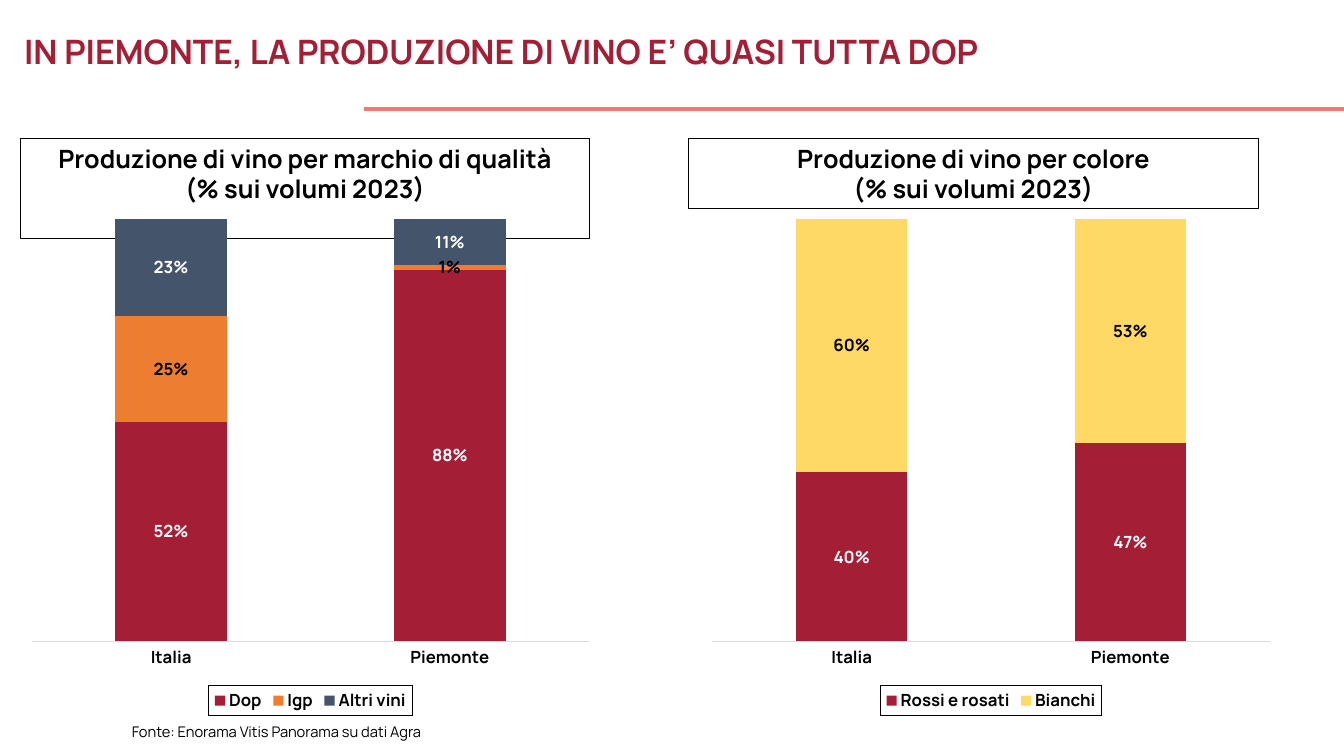
"""Build the slide on Piedmont wine production by quality mark and by colour."""
from dataclasses import dataclass

from lxml import etree
from pptx import Presentation
from pptx.chart.data import CategoryChartData
from pptx.dml.color import RGBColor
from pptx.enum.chart import XL_CHART_TYPE, XL_LABEL_POSITION, XL_LEGEND_POSITION, XL_TICK_MARK
from pptx.enum.shapes import MSO_CONNECTOR, MSO_SHAPE
from pptx.enum.text import MSO_ANCHOR, PP_ALIGN
from pptx.oxml.ns import qn
from pptx.util import Inches, Pt

STACKED = XL_CHART_TYPE.COLUMN_STACKED_100
CENTER_LABEL = XL_LABEL_POSITION.CENTER
BOTTOM = XL_LEGEND_POSITION.BOTTOM
NO_TICK = XL_TICK_MARK.NONE
STRAIGHT = MSO_CONNECTOR.STRAIGHT
RECT = MSO_SHAPE.RECTANGLE
TOP = MSO_ANCHOR.TOP
LEFT, CENTER = PP_ALIGN.LEFT, PP_ALIGN.CENTER


@dataclass(frozen=True)
class Theme:
    font: str = "Manrope"
    red: str = "A41F35"
    orange: str = "ED7D31"
    slate: str = "44546A"
    yellow: str = "FFD966"
    rule: str = "F87575"
    axis: str = "D9D9D9"
    black: str = "000000"
    white: str = "FFFFFF"
    title: float = 24
    heading: float = 18
    chart: float = 12
    source: float = 10.5


T = Theme()
TITLE = "IN PIEMONTE, LA PRODUZIONE DI VINO E’ QUASI TUTTA DOP"
SOURCE = "Fonte: Enorama Vitis Panorama su dati Agra"
SUBHEADING = "(% sui volumi 2023)"
REGIONS = ["Italia", "Piemonte"]
PANELS = [
    {
        "heading": "Produzione di vino per marchio di qualità",
        "box": (0.2, 1.0),
        "chart_left": 0.2,
        "legend_share": 0.35,
        "series": [
            ("Dop", (0.52, 0.88), T.red, T.white),
            ("Igp", (0.25, 0.01), T.orange, T.black),
            ("Altri vini", (0.23, 0.11), T.slate, T.white),
        ],
    },
    {
        "heading": "Produzione di vino per colore",
        "box": (6.83, 0.7),
        "chart_left": 6.95,
        "legend_share": 0.38,
        "series": [
            ("Rossi e rosati", (0.4, 0.47), T.red, T.white),
            ("Bianchi", (0.6, 0.53), T.yellow, T.black),
        ],
    },
]
WIDTH, HEIGHT = 13.33, 7.5
BOX_TOP, BOX_WIDTH = 1.37, 5.65
CHART_TOP, CHART_WIDTH, CHART_HEIGHT = 2.07, 5.76, 5.05
PLOT_SHARES = (0.02, 0.02, 0.96, 0.83)
LEGEND_TOP, LEGEND_HEIGHT = 0.94, 0.06


def rgb(color):
    return RGBColor.from_string(color)


def style_font(font, size, color, bold=True):
    font.name, font.size, font.bold = T.font, Pt(size), bold
    font.color.rgb = rgb(color)


def write(tf, lines, size, color, bold=True, align=LEFT, wrap=True):
    tf.word_wrap = wrap
    tf.vertical_anchor = TOP
    for i, line in enumerate(lines):
        p = tf.add_paragraph() if i else tf.paragraphs[0]
        p.alignment = align
        r = p.add_run()
        r.text = line
        style_font(r.font, size, color, bold)


def add_text(s, area, text, size, color, bold, wrap=True):
    box = s.shapes.add_textbox(*map(Inches, area))
    write(box.text_frame, [text], size, color, bold, wrap=wrap)


def make_layout(shares, inner=False):
    layout = etree.Element(qn("c:layout"))
    manual = etree.SubElement(layout, qn("c:manualLayout"))
    settings = [("layoutTarget", "inner")] if inner else []
    settings += [("xMode", "edge"), ("yMode", "edge")]
    settings += zip("xywh", shares)
    for tag, value in settings:
        etree.SubElement(manual, qn(f"c:{tag}")).set("val", str(value))
    return layout


def place_plot(chart):
    plot_area = chart._chartSpace.find(".//" + qn("c:plotArea"))
    for old in plot_area.findall(qn("c:layout")):
        plot_area.remove(old)
    plot_area.insert(0, make_layout(PLOT_SHARES, inner=True))


def add_legend(chart, share):
    chart.has_legend = True
    legend = chart.legend
    legend.position = BOTTOM
    legend.include_in_layout = False
    style_font(legend.font, T.chart, T.black)
    node = legend._element
    for old in node.findall(qn("c:layout")):
        node.remove(old)
    overlay = node.find(qn("c:overlay"))
    overlay.addprevious(make_layout(((1 - share) / 2, LEGEND_TOP, share, LEGEND_HEIGHT)))
    sp_pr = etree.Element(qn("c:spPr"))
    line = etree.SubElement(sp_pr, qn("a:ln"))
    fill = etree.SubElement(line, qn("a:solidFill"))
    etree.SubElement(fill, qn("a:srgbClr")).set("val", T.black)
    overlay.addnext(sp_pr)


def add_panel(s, panel):
    left, height = panel["box"]
    sp = s.shapes.add_shape(RECT, *map(Inches, (left, BOX_TOP, BOX_WIDTH, height)))
    sp.shadow.inherit = False
    sp.fill.background()
    sp.line.color.rgb = rgb(T.black)
    sp.line.width = Pt(0)
    write(sp.text_frame, [panel["heading"], SUBHEADING], T.heading, T.black, align=CENTER)

    data = CategoryChartData(number_format="0%")
    data.categories = REGIONS
    for name, values, _, _ in panel["series"]:
        data.add_series(name, values)
    area = (panel["chart_left"], CHART_TOP, CHART_WIDTH, CHART_HEIGHT)
    chart = s.shapes.add_chart(STACKED, *map(Inches, area), data).chart
    chart.has_title = False
    style_font(chart.font, T.chart, T.black)
    plot = chart.plots[0]
    plot.gap_width, plot.overlap, plot.vary_by_categories = 150, 100, False
    for series, (_, _, color, label_color) in zip(plot.series, panel["series"]):
        series.format.fill.solid()
        series.format.fill.fore_color.rgb = rgb(color)
        labels = series.data_labels
        labels.show_value = True
        labels.position = CENTER_LABEL
        labels.number_format, labels.number_format_is_linked = "0%", False
        style_font(labels.font, T.chart, label_color)
    chart.value_axis.visible = False
    chart.value_axis.has_major_gridlines = False
    axis = chart.category_axis
    axis.major_tick_mark = axis.minor_tick_mark = NO_TICK
    axis.format.line.color.rgb = rgb(T.axis)
    axis.format.line.width = Pt(0.75)
    style_font(axis.tick_labels.font, T.chart, T.black)
    place_plot(chart)
    add_legend(chart, panel["legend_share"])


def main():
    prs = Presentation()
    prs.slide_width, prs.slide_height = Inches(WIDTH), Inches(HEIGHT)
    s = prs.slides.add_slide(prs.slide_layouts[6])
    rule = s.shapes.add_connector(STRAIGHT, *map(Inches, (3.61, 1.08, WIDTH, 1.08)))
    rule.line.color.rgb = rgb(T.rule)
    rule.line.width = Pt(3)
    etree.SubElement(rule._element.spPr, qn("a:effectLst"))
    add_text(s, (0.14, 0.26, 13.06, 0.5), TITLE, T.title, T.red, True)
    add_text(s, (1.21, 7.12, 3.34, 0.27), SOURCE, T.source, T.black, False, wrap=False)
    for panel in PANELS:
        add_panel(s, panel)
    prs.save("out.pptx")


if __name__ == "__main__":
    main()
